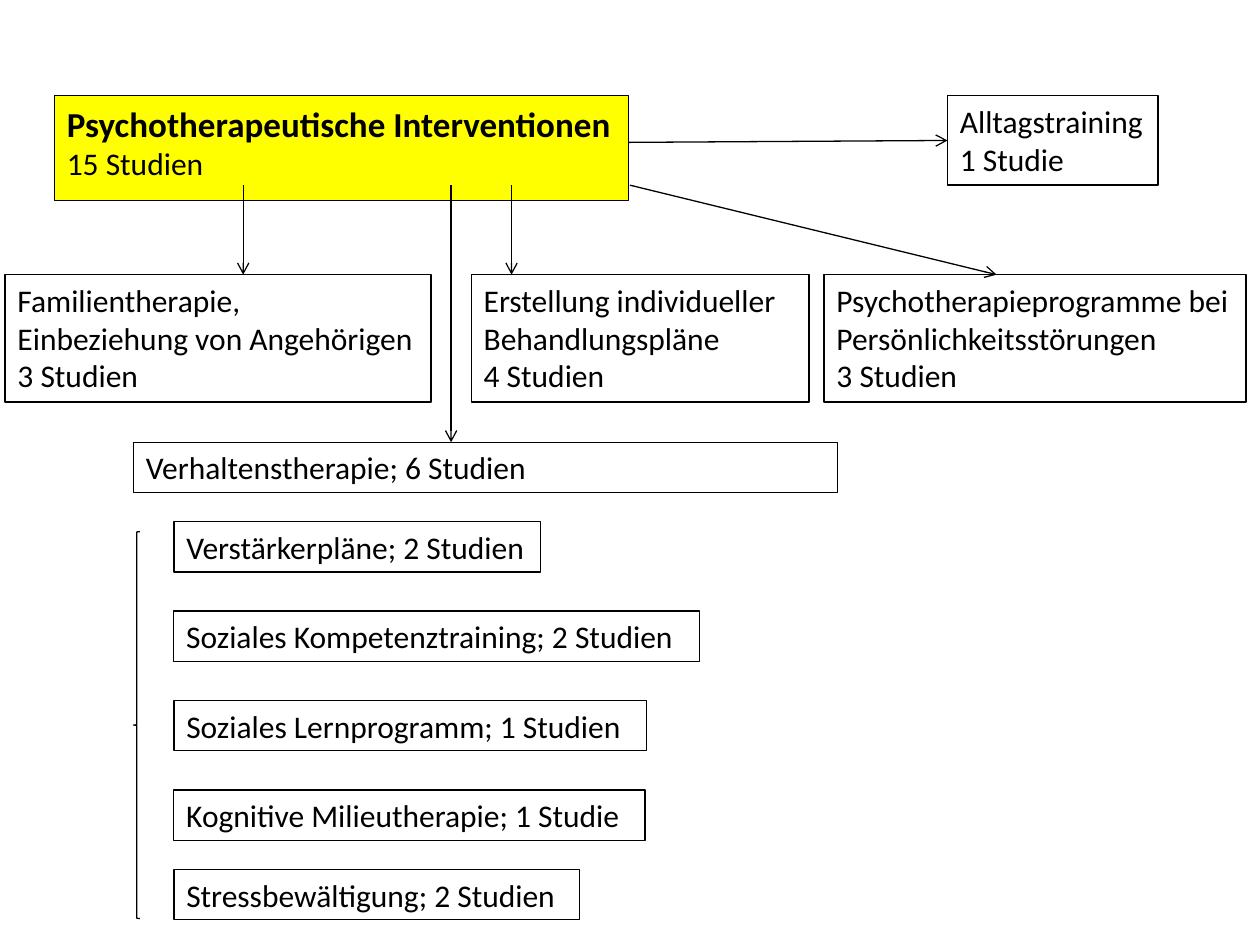
from pptx import Presentation
from pptx.dml.color import RGBColor
from pptx.enum.shapes import MSO_CONNECTOR as CONN, MSO_SHAPE as SHAPE
from pptx.enum.text import MSO_ANCHOR as ANCHOR, MSO_AUTO_SIZE as FIT, PP_ALIGN as ALIGN
from pptx.oxml.ns import qn
from pptx.util import Inches, Pt
from lxml.etree import SubElement

COLS, ROWS = 100, 75
TOP, BASE, BRANCH, THERAPY = 7.6, 14.7, 21.8, 35.1


def color(hex_text):
    return RGBColor.from_string(hex_text)


def write(p, text, size=18, bold=False, font="Calibri", ink="000000"):
    p.alignment = ALIGN.LEFT
    r = p.add_run()
    r.text = text
    r.font.name, r.font.size, r.font.bold = font, Pt(size), bold
    r.font.color.rgb = color(ink)


class Chart:
    def __init__(self, prs, ink="000000", weight=0.75):
        self.ink, self.weight = ink, weight
        self.s = prs.slides.add_slide(prs.slide_layouts[5])
        self.col = prs.slide_width / COLS
        self.row = prs.slide_height / ROWS

    def place(self, x, y, w, h):
        return int(x * self.col), int(y * self.row), int(w * self.col), int(h * self.row)

    def outline(self, sp):
        sp.line.color.rgb = color(self.ink)
        sp.line.width = Pt(self.weight)

    def fill_text(self, sp, lines, wrap=False, head=None):
        self.outline(sp)
        tf = sp.text_frame
        tf.word_wrap = wrap
        tf.auto_size = FIT.SHAPE_TO_FIT_TEXT
        tf.vertical_anchor = ANCHOR.TOP
        for i, text in enumerate(lines):
            p = tf.add_paragraph() if i else tf.paragraphs[0]
            write(p, text, **(head or {} if i == 0 else {}))
        return sp

    def title(self, x, y, w, h, lines, fill):
        sp = self.s.shapes.title
        sp.left, sp.top, sp.width, sp.height = self.place(x, y, w, h)
        sp.fill.solid()
        sp.fill.fore_color.rgb = color(fill)
        return self.fill_text(sp, lines, head=dict(size=20, bold=True))

    def box(self, x, y, w, h, *lines, wrap=False):
        sp = self.s.shapes.add_textbox(*self.place(x, y, w, h))
        return self.fill_text(sp, lines, wrap)

    def brace(self, x, y, w, h):
        sp = self.s.shapes.add_shape(SHAPE.LEFT_BRACE, *self.place(x, y, w, h))
        sp.shadow.inherit = False
        sp.fill.background()
        self.outline(sp)

    def arrow(self, x1, y1, x2, y2):
        line = self.s.shapes.add_connector(CONN.STRAIGHT, *self.place(x1, y1, x2, y2))
        self.outline(line)
        SubElement(line.line._get_or_add_ln(), qn("a:tailEnd"), type="arrow")
        SubElement(line._element.spPr, qn("a:effectLst"))
        return line


def main():
    prs = Presentation()
    prs.slide_width, prs.slide_height = Inches(10), Inches(7.5)
    c = Chart(prs)

    root = c.title(4.3, TOP, 45.6, 7.4,
                   ["Psychotherapeutische Interventionen", "15 Studien"], "FFFF00")
    daily = c.box(75.2, TOP, 16.7, 7.1, "Alltagstraining", "1 Studie")

    c.box(0.4, BRANCH, 33.8, 10.1,
          "Familientherapie,", "Einbeziehung von Angehörigen", "3 Studien")
    c.box(37.4, BRANCH, 26.8, 10.1,
          "Erstellung individueller Behandlungspläne", "4 Studien", wrap=True)
    c.box(65.4, BRANCH, 33.5, 10.1,
          "Psychotherapieprogramme bei", "Persönlichkeitsstörungen", "3 Studien")
    c.box(10.6, THERAPY, 55.9, 4, "Verhaltenstherapie; 6 Studien", wrap=True)

    methods = [
        (41.4, 29.1, "Verstärkerpläne; 2 Studien"),
        (48.5, 41.7, "Soziales Kompetenztraining; 2 Studien"),
        (55.6, 37.5, "Soziales Lernprogramm; 1 Studien"),
        (62.7, 37.4, "Kognitive Milieutherapie; 1 Studie"),
        (69, 32.2, "Stressbewältigung; 2 Studien"),
    ]
    for y, width, text in methods:
        c.box(13.8, y, width, 4, text)
    c.brace(10.6, 42.2, 0.5, 30.7)

    for x1, x2, y2 in [(19.3, 19.3, BRANCH), (40.6, 40.6, BRANCH),
                       (50, 79.1, BRANCH), (35.8, 35.8, THERAPY)]:
        c.arrow(x1, BASE, x2, y2)
    link = c.arrow(49.9, 11.3, 75.2, 11.1)
    link.begin_connect(root, 3)
    link.end_connect(daily, 1)

    prs.save("out.pptx")


if __name__ == "__main__":
    main()
